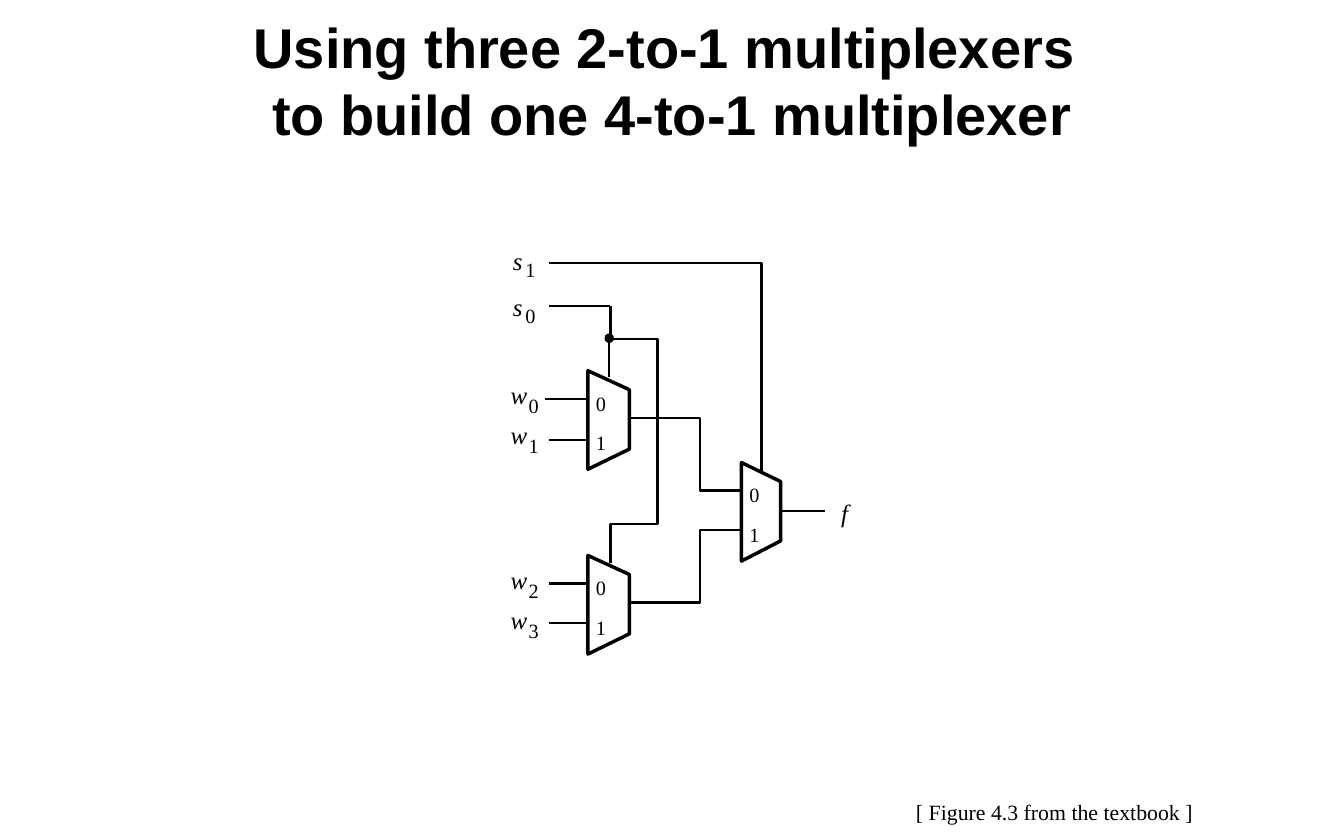
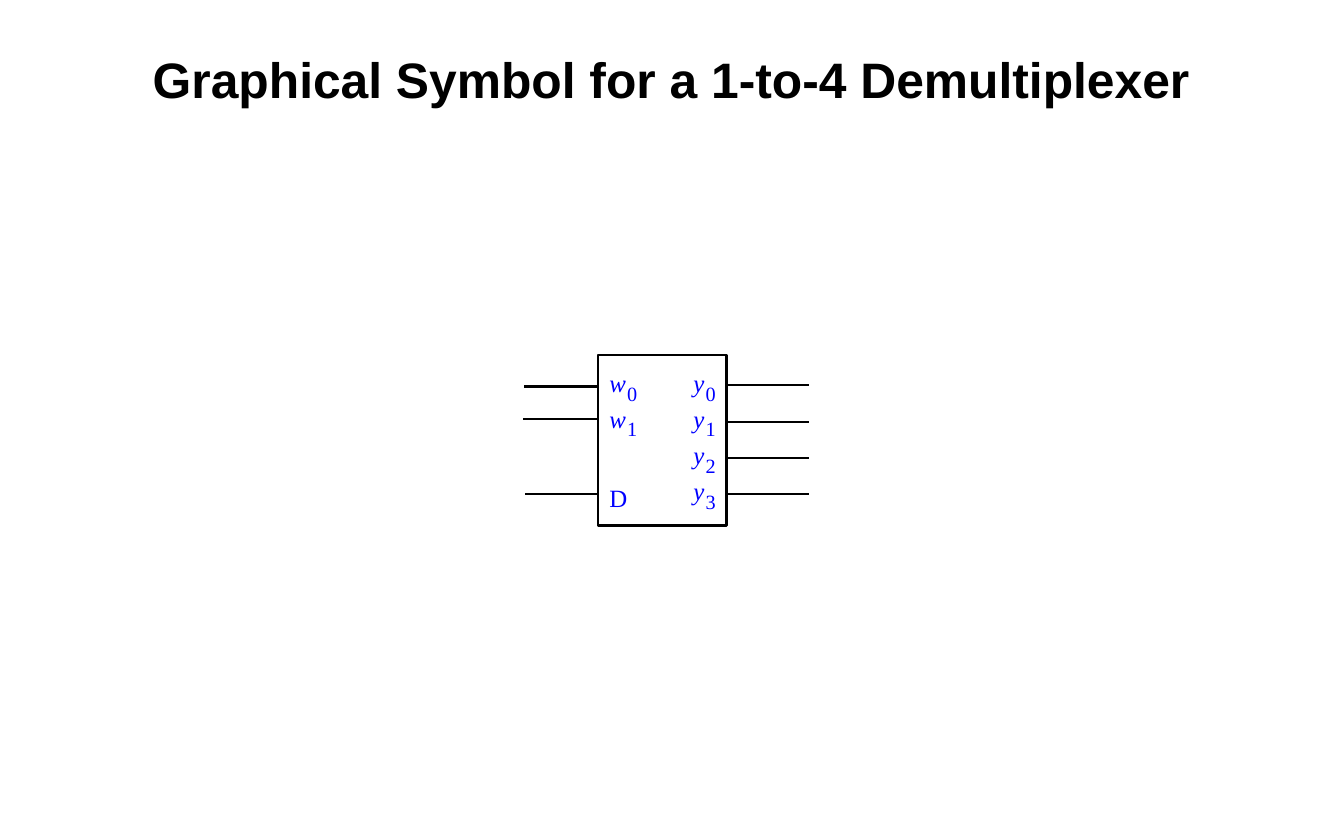
"""Build two slides: a 4-to-1 multiplexer circuit and a demultiplexer symbol."""
from dataclasses import dataclass
from typing import NamedTuple

from lxml.etree import SubElement
from pptx import Presentation
from pptx.dml.color import RGBColor
from pptx.enum.shapes import MSO_CONNECTOR, MSO_SHAPE
from pptx.enum.text import MSO_ANCHOR, MSO_AUTO_SIZE as AutoSize, PP_ALIGN
from pptx.oxml.ns import qn
from pptx.util import Inches, Pt

COLS, ROWS = 1200, 750
CELL = Inches(12) // COLS
COLORS = {"ink": "000000", "pin": "0000FF"}
FONTS = {"title": "Arial", "label": "Times New Roman"}
WIRE, FRAME, BODY = 1.5, 1.75, 2.25
DIGIT_WIDTH = 14


class Glyph(NamedTuple):
    width: int
    sub_x: int = 0
    sub_y: int = 0
    italic: bool = True


GLYPHS = {
    "w": Glyph(22, 16, 12),
    "s": Glyph(14, 11, 11),
    "y": Glyph(17, 11, 12),
    "f": Glyph(13),
    "D": Glyph(16, italic=False),
}


class Signal(NamedTuple):
    name: str
    x: int
    y: int


class Wire(NamedTuple):
    points: tuple[tuple[int, int], ...]


@dataclass(frozen=True)
class Mux:
    left: int
    top: int
    width: int

    @property
    def outline(self) -> list[tuple[int, int]]:
        right = self.left + self.width
        return [(self.left, self.top), (right, self.top + 17),
                (right, self.top + 70), (self.left, self.top + 88)]


MUXES = [Mux(525, 331, 37), Mux(525, 496, 37), Mux(662, 413, 35)]
MUX_SIGNALS = [
    Signal("s1", 458, 219), Signal("s0", 458, 260),
    Signal("w0", 456, 339), Signal("w1", 456, 375),
    Signal("w2", 456, 504), Signal("w3", 456, 540),
    Signal("f", 751, 444),
]
MUX_WIRES = [
    Wire(((490, 235), (680, 235), (680, 421))),
    Wire(((490, 273), (545, 273))),
    Wire(((545, 303), (545, 273))),
    Wire(((544, 302), (544, 337))),
    Wire(((545, 303), (587, 303), (587, 468), (545, 468), (545, 503))),
    Wire(((487, 356), (525, 356))),
    Wire(((490, 393), (525, 393))),
    Wire(((490, 521), (525, 521))),
    Wire(((490, 556), (525, 556))),
    Wire(((662, 438), (625, 438), (625, 373), (562, 373))),
    Wire(((662, 473), (625, 473), (625, 538), (562, 538))),
    Wire(((737, 456), (697, 456))),
]

BOX_LEFT, BOX_TOP, BOX_WIDTH, BOX_HEIGHT = 534, 317, 115, 152
BOX_RIGHT = BOX_LEFT + BOX_WIDTH
PIN_TOP, PIN_STEP = 328, 32.3
DEMUX_SIGNALS = [Signal("w0", 544, 328), Signal("w1", 544, 360), Signal("D", 544, 431)] + [
    Signal(f"y{i}", 619, round(PIN_TOP + i * PIN_STEP)) for i in range(4)
]
DEMUX_WIRES = [Wire(((x, y), (BOX_LEFT, y))) for x, y in ((468, 345), (467, 374), (469, 441))] + [
    Wire(((BOX_RIGHT, y), (722, y))) for y in (344, 377, 409, 441)
]


def rgb(key: str) -> RGBColor:
    """Look up a palette colour."""
    return RGBColor.from_string(COLORS[key])


def set_line(sp, width: float) -> None:
    """Give a shape a solid ink line."""
    sp.line.color.rgb = rgb("ink")
    sp.line.width = Pt(width)


def set_font(p, name: str, size: float, color: str = "ink",
             bold: bool = False, italic: bool = False) -> None:
    """Format a whole paragraph."""
    font = p.font
    font.name, font.size, font.bold, font.italic = FONTS[name], Pt(size), bold, italic
    font.color.rgb = rgb(color)


def add_title(s, text: str, top: int, height: int, size: int) -> None:
    """Place and format the title placeholder."""
    sp = s.shapes.title
    sp.left, sp.top, sp.width, sp.height = (CELL * n for n in (100, top, 1000, height))
    tf = sp.text_frame
    tf.text = text
    tf.auto_size = AutoSize.NONE
    tf.vertical_anchor = MSO_ANCHOR.MIDDLE
    for p in tf.paragraphs:
        p.alignment = PP_ALIGN.CENTER
        set_font(p, "title", size, bold=True)


def add_label(s, text: str, box: tuple[int, int, int, int], size: int,
              color: str = "ink", italic: bool = False, inset: bool = False) -> None:
    """Write one unwrapped line of text."""
    tf = s.shapes.add_textbox(*(CELL * n for n in box)).text_frame
    if not inset:
        tf.margin_left = tf.margin_right = tf.margin_top = tf.margin_bottom = 0
    tf.word_wrap = False
    tf.auto_size = AutoSize.SHAPE_TO_FIT_TEXT
    p = tf.paragraphs[0]
    p.text = text
    set_font(p, "label", size, color, italic=italic)


def add_digit(s, text: str, x: int, y: int, color: str = "ink") -> None:
    """Write a subscript or a data input number."""
    add_label(s, text, (x, y, DIGIT_WIDTH, 22), 13, color)


def add_signal(s, signal: Signal, color: str = "ink") -> None:
    """Write a signal letter and its subscript."""
    letter, sub = signal.name[0], signal.name[1:]
    glyph = GLYPHS[letter]
    add_label(s, letter, (signal.x, signal.y, glyph.width, 27), 16, color, glyph.italic)
    if sub:
        add_digit(s, sub, signal.x + glyph.sub_x, signal.y + glyph.sub_y, color)


def add_outline(s, points, width: float, close: bool) -> None:
    """Draw an unfilled path through grid points."""
    builder = s.shapes.build_freeform(*points[0], scale=CELL)
    builder.add_line_segments(points[1:], close=close)
    sp = builder.convert_to_shape()
    sp.shadow.inherit = False
    sp.fill.background()
    set_line(sp, width)


def add_wire(s, wire: Wire) -> None:
    """Draw a straight wire as a connector and a bent one as a path."""
    if len(wire.points) > 2:
        add_outline(s, wire.points, WIRE, close=False)
        return
    ends = (CELL * n for point in wire.points for n in point)
    sp = s.shapes.add_connector(MSO_CONNECTOR.STRAIGHT, *ends)
    set_line(sp, WIRE)
    SubElement(sp._element.spPr, qn("a:effectLst"))


def add_frame(s, kind: MSO_SHAPE, box: tuple[int, int, int, int], filled: bool = False) -> None:
    """Draw a preset shape, optionally filled with ink."""
    sp = s.shapes.add_shape(kind, *(CELL * n for n in box))
    sp.shadow.inherit = False
    if filled:
        sp.fill.solid()
        sp.fill.fore_color.rgb = rgb("ink")
    else:
        sp.fill.background()
    set_line(sp, FRAME)


def add_mux(s, mux: Mux) -> None:
    """Draw a multiplexer body with its two input numbers."""
    add_outline(s, mux.outline, BODY, close=True)
    for i in range(2):
        add_digit(s, str(i), mux.left + 7, mux.top + 18 + 35 * i)


def build_mux_slide(s) -> None:
    """Compose the 4-to-1 multiplexer circuit."""
    add_title(s, "Using three 2-to-1 multiplexers \nto build one 4-to-1 multiplexer", 0, 142, 36)
    for wire in MUX_WIRES:
        add_wire(s, wire)
    for mux in MUXES:
        add_mux(s, mux)
    for signal in MUX_SIGNALS:
        add_signal(s, signal)
    add_frame(s, MSO_SHAPE.OVAL, (541, 299, 6, 6), filled=True)
    add_label(s, "[ Figure 4.3 from the textbook ]", (808, 708, 269, 34), 14, inset=True)


def build_demux_slide(s) -> None:
    """Compose the 1-to-4 demultiplexer symbol."""
    add_title(s, "Graphical Symbol for a 1-to-4 Demultiplexer", 33, 75, 32)
    add_frame(s, MSO_SHAPE.RECTANGLE, (BOX_LEFT, BOX_TOP, BOX_WIDTH, BOX_HEIGHT))
    for wire in DEMUX_WIRES:
        add_wire(s, wire)
    for signal in DEMUX_SIGNALS:
        add_signal(s, signal, "pin")


def main() -> None:
    """Build and save the presentation."""
    prs = Presentation()
    prs.slide_width, prs.slide_height = CELL * COLS, CELL * ROWS
    for build in (build_mux_slide, build_demux_slide):
        build(prs.slides.add_slide(prs.slide_layouts[5]))
    prs.save("out.pptx")


if __name__ == "__main__":
    main()
